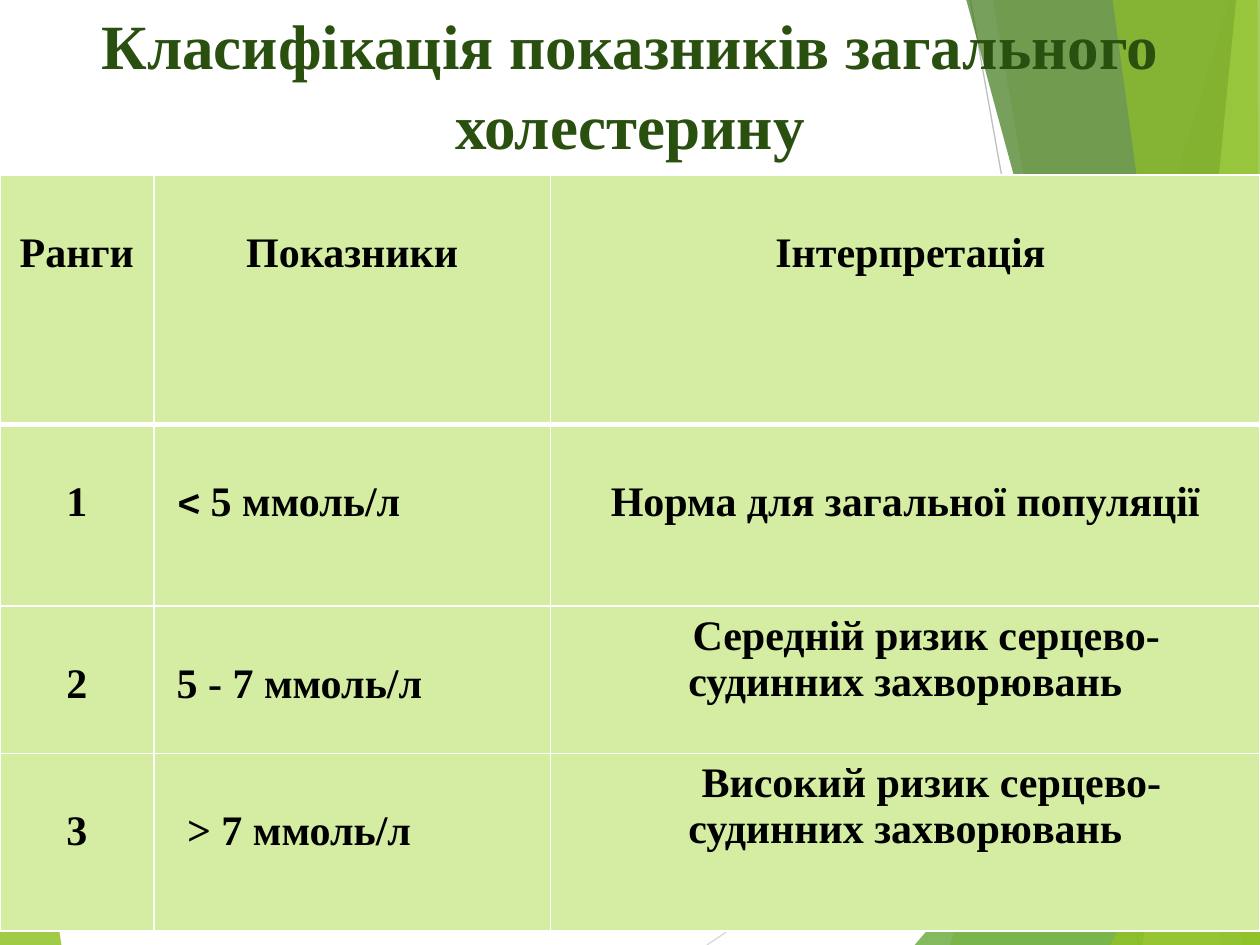
"""Build the slide that classifies total cholesterol readings."""
import dataclasses

import lxml.etree
import pptx
import pptx.dml.color
import pptx.enum.shapes
import pptx.enum.text
import pptx.oxml.ns
import pptx.util

Cm = pptx.util.Cm
Pt = pptx.util.Pt
qn = pptx.oxml.ns.qn
Align = pptx.enum.text.PP_ALIGN
WIDTH, HEIGHT = 25.4, 19.05


@dataclasses.dataclass(frozen=True)
class Theme:
    font: str = "Times New Roman"
    symbol_font: str = "Cambria"
    title_size: int = 36
    body_size: int = 24
    title: str = "2A5010"
    body: str = "000000"
    cell: str = "D5EDA2"
    border: str = "FFFFFF"
    lime: str = "90C226"
    green: str = "54A021"
    forest: str = "3F7819"
    pale: str = "C0E474"


@dataclasses.dataclass(frozen=True)
class Entry:
    text: str
    symbol: str = ""
    align: Align = Align.CENTER
    top: float = 1.1
    left: float = 0.25
    indent: float = 0


class Deck:
    def __init__(self, theme):
        self.theme = theme
        self.presentation = pptx.Presentation()
        self.presentation.slide_width = Cm(WIDTH)
        self.presentation.slide_height = Cm(HEIGHT)
        self.slide = self.presentation.slides.add_slide(self.presentation.slide_layouts[6])

    def rgb(self, value):
        return pptx.dml.color.RGBColor.from_string(value)

    def style(self, run, size, color, font=None):
        run.font.name = font or self.theme.font
        run.font.size = Pt(size)
        run.font.bold = True
        run.font.color.rgb = self.rgb(color)

    def facet(self, corners, color, opacity):
        points = [(Cm(x), Cm(y)) for x, y in corners]
        builder = self.slide.shapes.build_freeform(*points[0])
        builder.add_line_segments(points[1:], close=True)
        facet = builder.convert_to_shape()
        facet.shadow.inherit = False
        facet.line.fill.background()
        facet.fill.solid()
        facet.fill.fore_color.rgb = self.rgb(color)
        tint = next(facet.fill._xPr.iter(qn("a:srgbClr")))
        lxml.etree.SubElement(tint, qn("a:alpha"), val=str(opacity * 1000))

    def ray(self, start, end, color):
        ray = self.slide.shapes.add_connector(
            pptx.enum.shapes.MSO_CONNECTOR.STRAIGHT, *map(Cm, start + end))
        ray.line.color.rgb = self.rgb(color)
        ray.line.width = Pt(0.75)
        lxml.etree.SubElement(ray._element.spPr, qn("a:effectLst"))

    def title(self, text, left, top, width, height):
        frame = self.slide.shapes.add_textbox(*map(Cm, (left, top, width, height))).text_frame
        frame.word_wrap = True
        frame.vertical_anchor = pptx.enum.text.MSO_ANCHOR.MIDDLE
        frame.text = text
        heading = frame.paragraphs[0]
        heading.alignment = Align.CENTER
        heading.line_spacing = 1.05
        self.style(heading.runs[0], self.theme.title_size, self.theme.title)

    def borders(self, cell, bottom):
        properties = cell._tc.get_or_add_tcPr()
        widths = {"lnL": 1, "lnR": 1, "lnT": 1, "lnB": bottom}
        for position, (side, width) in enumerate(widths.items()):
            edge = lxml.etree.Element(qn(f"a:{side}"), w=str(Pt(width)))
            fill = lxml.etree.SubElement(edge, qn("a:solidFill"))
            lxml.etree.SubElement(fill, qn("a:srgbClr"), val=self.theme.border)
            properties.insert(position, edge)

    def fill_cell(self, cell, entry, bottom):
        cell.fill.solid()
        cell.fill.fore_color.rgb = self.rgb(self.theme.cell)
        cell.margin_top = Cm(entry.top)
        cell.margin_left = Cm(entry.left)
        line = cell.text_frame.paragraphs[0]
        line.alignment = entry.align
        if entry.indent:
            line._p.get_or_add_pPr().set("indent", str(Cm(entry.indent)))
        for text, font in ((entry.symbol, self.theme.symbol_font), (entry.text, self.theme.font)):
            if text:
                run = line.add_run()
                run.text = text
                self.style(run, self.theme.body_size, self.theme.body, font)
        self.borders(cell, bottom)

    def table(self, entries, top, widths, heights):
        table = self.slide.shapes.add_table(
            len(heights), len(widths), Cm(0), Cm(top), Cm(sum(widths)), Cm(sum(heights))).table
        table.first_row = table.horz_banding = False
        for column, width in zip(table.columns, widths):
            column.width = Cm(width)
        for number, (row, height, row_entries) in enumerate(zip(table.rows, heights, entries)):
            row.height = Cm(height)
            for cell, entry in zip(row.cells, row_entries):
                self.fill_cell(cell, entry, 1 if number else 3)


def main():
    theme = Theme()
    deck = Deck(theme)
    corner, base = (WIDTH, 0), (WIDTH, HEIGHT)

    deck.facet([(0, 11.15), (1.24, HEIGHT), (0, HEIGHT)], theme.lime, 85)
    deck.ray((14.25, HEIGHT), (WIDTH, 11.61), "D9D9D9")
    deck.ray((19.56, 0), (22.96, HEIGHT), "BFBFBF")
    facets = [
        ([(24.77, 0), (19.15, HEIGHT), base, corner], theme.lime, 30),
        ([(20.02, 0), (23.34, HEIGHT), base, corner], theme.lime, 20),
        ([(18.44, HEIGHT), (WIDTH, 10.9), base], theme.green, 72),
        ([(19.48, 0), (24.64, HEIGHT), base, corner], theme.forest, 70),
        ([(24.92, 0), (23.04, HEIGHT), base, corner], theme.pale, 70),
        ([(22.43, 0), (25.04, HEIGHT), base, (25.35, 0)], theme.lime, 65),
        ([(22.38, HEIGHT), (WIDTH, 13.59), base], theme.lime, 80),
    ]
    for corners, color, opacity in facets:
        deck.facet(corners, color, opacity)

    deck.title("Класифікація показників загального холестерину", 0.3, 0, 24.8, 3.33)

    risk = "ризик серцево-судинних захворювань"
    entries = [
        [Entry("Ранги"), Entry("Показники"), Entry("Інтерпретація", indent=0.21)],
        [Entry("1"), Entry("5 ммоль/л", symbol="< ", align=Align.LEFT, left=0.46),
         Entry("Норма для загальної популяції")],
        [Entry("2"), Entry("5 - 7 ммоль/л", align=Align.LEFT, left=0.46),
         Entry(f"Середній {risk}", top=0.13, indent=0.85)],
        [Entry("3"), Entry("> 7 ммоль/л", align=Align.LEFT, left=0.67),
         Entry(f"Високий {risk}", top=0.13, indent=1.06)],
    ]
    deck.table(entries, 3.53, [3.1, 8, 14.3], [5.03, 3.66, 2.97, 3.58])
    deck.presentation.save("out.pptx")


if __name__ == "__main__":
    main()
